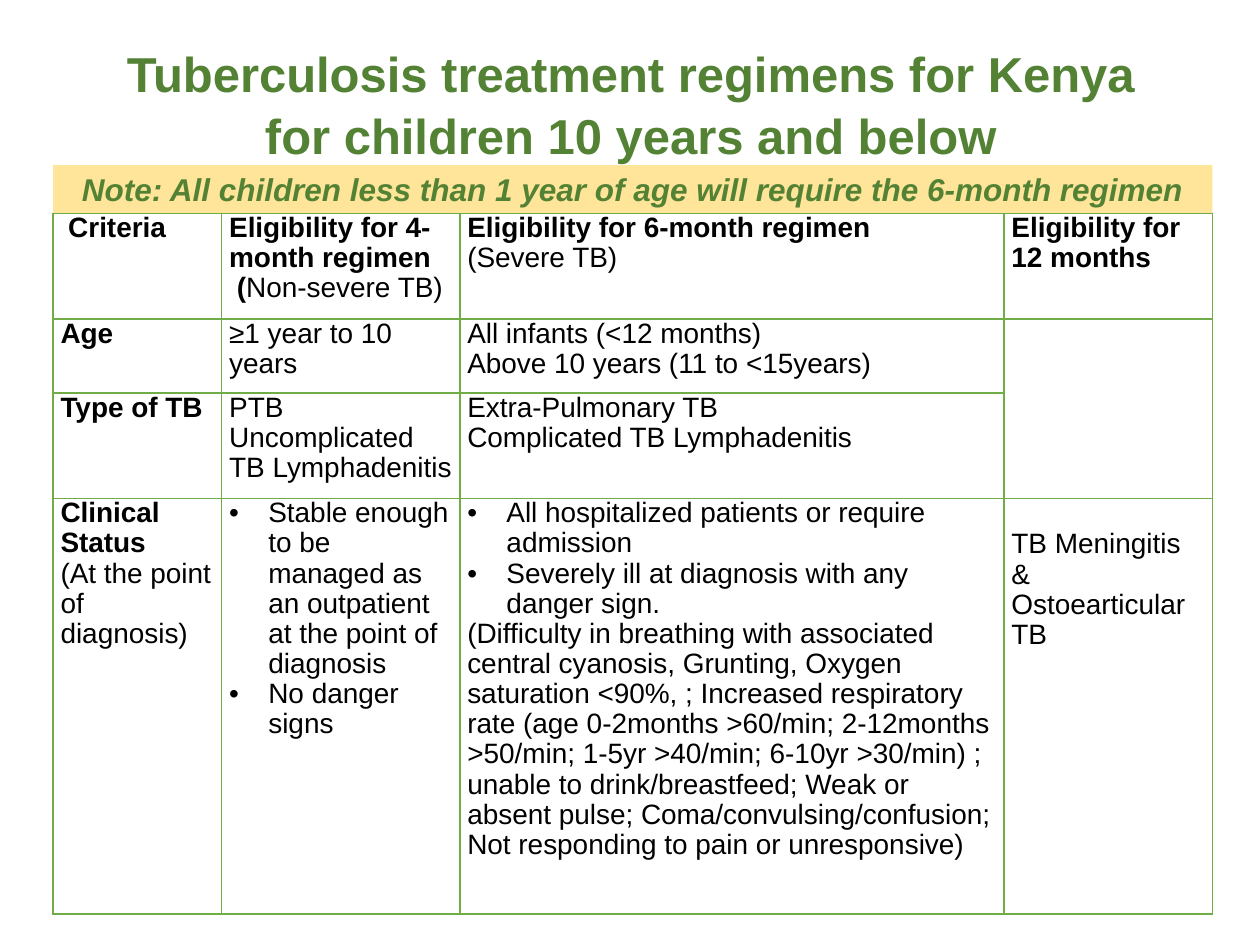
import lxml.etree
import pptx
import pptx.dml.color
import pptx.enum.shapes
import pptx.enum.text
import pptx.oxml
import pptx.oxml.ns
import pptx.util

Cm = pptx.util.Cm
RGBColor = pptx.dml.color.RGBColor
qualified = pptx.oxml.ns.qn
ALIGN = pptx.enum.text.PP_ALIGN
ANCHOR = pptx.enum.text.MSO_ANCHOR

DARK_GREEN = RGBColor(0x54, 0x82, 0x35)
BORDER_GREEN = RGBColor(0x70, 0xAD, 0x47)
PALE_YELLOW = RGBColor(0xFE, 0xE5, 0x99)
BLACK = RGBColor(0, 0, 0)

BOLD, PLAIN, BULLET = "bold", "plain", "bullet"
COLUMN_WIDTHS = [3.4, 4.8, 10.97, 4.2]
ROW_HEIGHTS = [2.13, 1.49, 2.13, 8.38]
SEVERE_SIGNS = (
    "(Difficulty in breathing with associated central cyanosis, Grunting, Oxygen "
    "saturation <90%, ; Increased respiratory rate (age 0-2months >60/min; "
    "2-12months >50/min; 1-5yr >40/min; 6-10yr >30/min) ; unable to "
    "drink/breastfeed; Weak or absent pulse; Coma/convulsing/confusion; "
    "Not responding to pain or unresponsive)"
)
REGIMENS = [
    [
        [(BOLD, " Criteria")],
        [(BOLD, "Eligibility for 4-month regimen"), (PLAIN, " (", "Non-severe TB)")],
        [(BOLD, "Eligibility for 6-month regimen"), (PLAIN, "(Severe TB)")],
        [(BOLD, "Eligibility for 12 months")],
    ],
    [
        [(BOLD, "Age")],
        [(PLAIN, "≥1 year to 10 years")],
        [(PLAIN, "All infants (<12 months)"), (PLAIN, "Above 10 years (11 to <15years)")],
        [],
    ],
    [
        [(BOLD, "Type of TB")],
        [(PLAIN, "PTB"), (PLAIN, "Uncomplicated TB Lymphadenitis")],
        [(PLAIN, "Extra-Pulmonary TB"), (PLAIN, "Complicated TB Lymphadenitis")],
        [],
    ],
    [
        [(BOLD, "Clinical Status"), (PLAIN, "(At the point of diagnosis)")],
        [
            (BULLET, "Stable enough to be managed as an outpatient at the point of diagnosis"),
            (BULLET, "No danger signs"),
        ],
        [
            (BULLET, "All hospitalized patients or require admission"),
            (BULLET, "Severely ill at diagnosis with any danger sign."),
            (PLAIN, SEVERE_SIGNS),
        ],
        [(PLAIN, "TB Meningitis & Ostoearticular TB")],
    ],
]


def write_text(paragraph, *texts, size=16, color=BLACK, bold=False, italic=False,
               align=ALIGN.LEFT, spacing=1.0):
    paragraph.alignment = align
    paragraph.line_spacing = spacing
    for index, text in enumerate(texts):
        run = paragraph.add_run()
        run.text = text
        run.font.name = "Arial"
        run.font.size = pptx.util.Pt(size)
        run.font.color.rgb = color
        run.font.bold = bold or index < len(texts) - 1
        run.font.italic = italic


def add_bullet(paragraph, indent):
    properties = paragraph._p.get_or_add_pPr()
    properties.set("marL", str(indent))
    properties.set("indent", str(-indent))
    font = lxml.etree.SubElement(properties, qualified("a:buFont"))
    font.set("typeface", "Arial")
    lxml.etree.SubElement(properties, qualified("a:buChar")).set("char", "•")


def set_borders(cell, color, width):
    properties = cell._tc.get_or_add_tcPr()
    for index, side in enumerate(("a:lnL", "a:lnR", "a:lnT", "a:lnB")):
        line = properties.makeelement(qualified(side), {"w": str(pptx.util.Pt(width))})
        fill = lxml.etree.SubElement(line, qualified("a:solidFill"))
        lxml.etree.SubElement(fill, qualified("a:srgbClr")).set("val", str(color))
        properties.insert(index, line)


def fill_cell(cell, content):
    cell.margin_left = cell.margin_right = Cm(0.15)
    cell.margin_top = cell.margin_bottom = 0
    cell.vertical_anchor = ANCHOR.TOP
    cell.fill.background()
    set_borders(cell, BORDER_GREEN, 1)
    for index, (style, *texts) in enumerate(content):
        frame = cell.text_frame
        paragraph = frame.add_paragraph() if index else frame.paragraphs[0]
        if style == BULLET:
            add_bullet(paragraph, Cm(0.79))
        write_text(paragraph, *texts, bold=style == BOLD, spacing=0.97)


def place_title(slide, left, top, width, height):
    title = slide.shapes.title
    title.left, title.top, title.width, title.height = left, top, width, height
    frame = title.text_frame
    frame.word_wrap = True
    frame.auto_size = pptx.enum.text.MSO_AUTO_SIZE.NONE
    frame.vertical_anchor = ANCHOR.TOP
    write_text(frame.paragraphs[0],
               "Tuberculosis treatment regimens for Kenya for children 10 years and below",
               size=28, color=DARK_GREEN, bold=True, align=ALIGN.CENTER, spacing=1.05)


def add_note(slide, left, top, width, height):
    note = slide.shapes.add_shape(pptx.enum.shapes.MSO_SHAPE.RECTANGLE,
                                  left, top, width, height)
    note.shadow.inherit = False
    note.fill.solid()
    note.fill.fore_color.rgb = PALE_YELLOW
    note.line.fill.background()
    frame = note.text_frame
    frame.word_wrap = True
    frame.margin_left = frame.margin_right = Cm(0.18)
    frame.margin_top = frame.margin_bottom = Cm(0.1)
    frame.vertical_anchor = ANCHOR.MIDDLE
    write_text(frame.paragraphs[0],
               "Note: All children less than 1 year of age will require the 6-month regimen",
               size=18, color=DARK_GREEN, bold=True, italic=True, align=ALIGN.CENTER)


def add_regimen_table(slide, left, top, width, height):
    table = slide.shapes.add_table(len(ROW_HEIGHTS), len(COLUMN_WIDTHS),
                                   left, top, width, height).table
    table.first_row = table.horz_banding = False
    for column, column_width in zip(table.columns, COLUMN_WIDTHS):
        column.width = Cm(column_width)
    for row, row_height, contents in zip(table.rows, ROW_HEIGHTS, REGIMENS):
        row.height = Cm(row_height)
        for cell, content in zip(row.cells, contents):
            fill_cell(cell, content)
    table.cell(1, 3).merge(table.cell(2, 3))
    table.cell(3, 3).margin_top = Cm(0.63)


def main():
    presentation = pptx.Presentation()
    presentation.slide_width, presentation.slide_height = Cm(25.4), Cm(19.05)
    slide = presentation.slides.add_slide(presentation.slide_layouts[5])
    left, width = Cm(1.07), Cm(sum(COLUMN_WIDTHS))
    place_title(slide, Cm(1.55), Cm(0.69), Cm(22.33), Cm(2.64))
    add_note(slide, left, Cm(3.33), width, Cm(0.97))
    add_regimen_table(slide, left, Cm(4.3), width, Cm(sum(ROW_HEIGHTS)))
    presentation.save("out.pptx")


if __name__ == "__main__":
    main()
